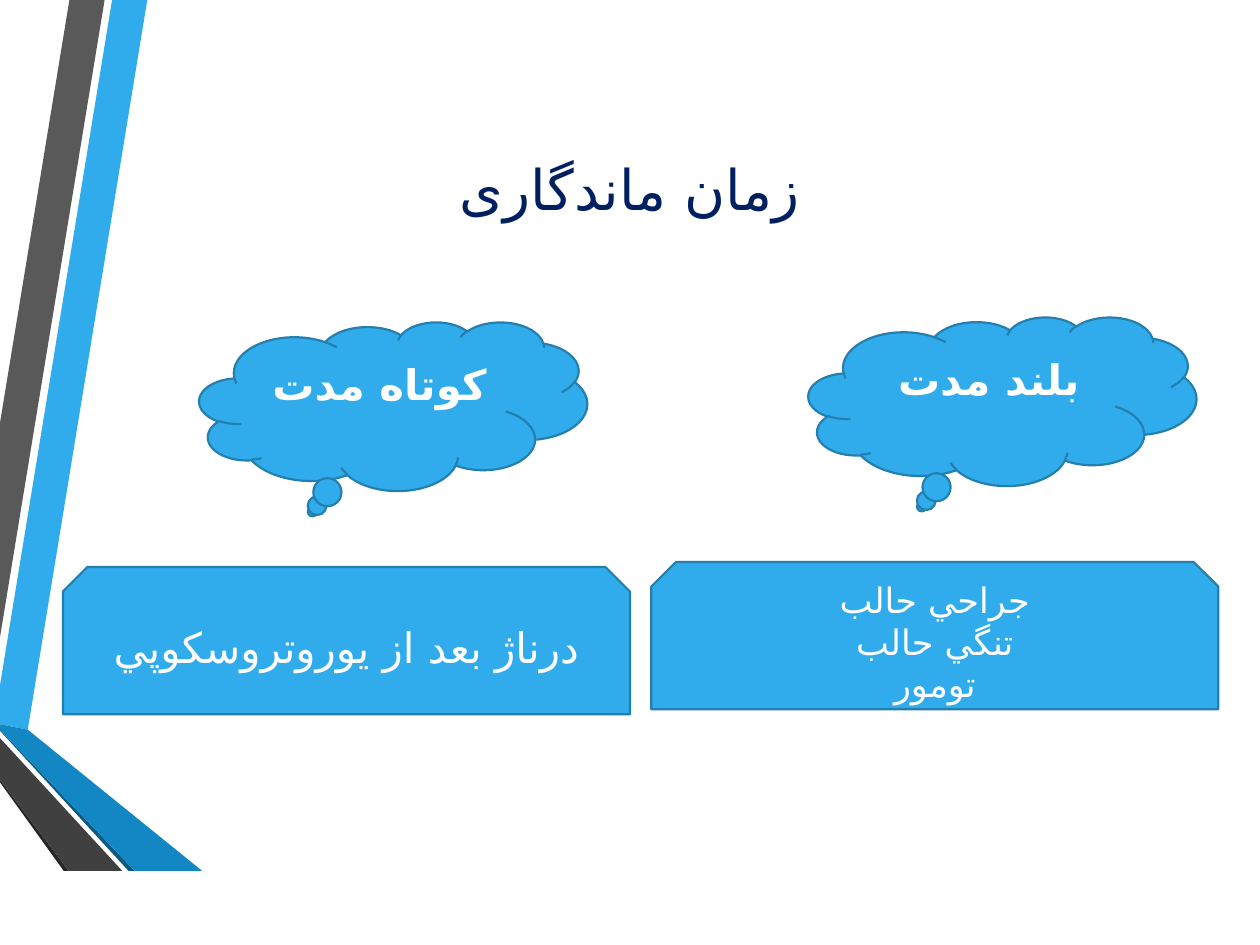
from dataclasses import dataclass

from lxml import etree
from pptx import Presentation
from pptx.dml.color import RGBColor
from pptx.enum.shapes import MSO_SHAPE
from pptx.enum.text import MSO_ANCHOR, PP_ALIGN
from pptx.oxml.ns import qn
from pptx.util import Cm, Pt

CLOUD = MSO_SHAPE.CLOUD_CALLOUT
SNIPPED = MSO_SHAPE.SNIP_2_SAME_RECTANGLE
RECTANGLE = MSO_SHAPE.RECTANGLE
CENTER = PP_ALIGN.CENTER
MIDDLE = MSO_ANCHOR.MIDDLE


@dataclass(frozen=True)
class Theme:
    font: str = "Calibri"
    persian_font: str = "DejaVu Sans"
    title: str = "002060"
    accent: str = "30ACEC"
    outline: str = "247FAF"
    white: str = "FFFFFF"
    title_size: int = 32
    body_size: int = 24
    list_size: int = 20
    line_width: float = 1.25


THEME = Theme()

# Ribbon corners in hundredths of a centimetre
RIBBONS = [
    (THEME.accent, [(0, 1382), (0, 1460), (56, 1471), (297, 0), (226, 0)]),
    ("595959", [(211, 0), (140, 0), (0, 853), (0, 1285)]),
    ("262626", [(0, 1572), (0, 1577), (236, 1905), (251, 1905)]),
    ("0C5A82", [(0, 1471), (0, 1473), (396, 1905), (414, 1905)]),
    ("1287C3", [(0, 1471), (414, 1905), (592, 1905), (56, 1471), (0, 1460)]),
    ("404040", [(0, 1572), (251, 1905), (384, 1905), (0, 1488)]),
]

# Cloud left, box left, top shift, heading, items, item size
COLUMNS = [
    (4.02, 1.27, 0, "کوتاه مدت", ["درناژ بعد از يوروتروسكوپي"], THEME.body_size),
    (16.3, 13.13, -0.1, "بلند مدت", ["جراحي حالب", "تنگي حالب", "تومور"],
     THEME.list_size),
]


def paint(sp, fill, line=None):
    sp.shadow.inherit = False
    sp.fill.solid()
    sp.fill.fore_color.rgb = RGBColor.from_string(fill)
    if line:
        sp.line.color.rgb = RGBColor.from_string(line)
        sp.line.width = Pt(THEME.line_width)
    else:
        sp.line.fill.background()


def write(tf, lines, size, color, bold=False):
    """Fill a text frame with centred right-to-left paragraphs."""
    tf.word_wrap = True
    tf.vertical_anchor = MIDDLE
    for i, line in enumerate(lines):
        p = tf.paragraphs[0] if i == 0 else tf.add_paragraph()
        p.alignment = CENTER
        p._p.get_or_add_pPr().set("rtl", "1")
        r = p.add_run()
        r.text = line
        r.font.name = THEME.font
        r.font.size = Pt(size)
        r.font.bold = bold
        r.font.color.rgb = RGBColor.from_string(color)
        rPr = r._r.get_or_add_rPr()
        rPr.set("lang", "fa-IR")
        etree.SubElement(rPr, qn("a:cs")).set("typeface", THEME.persian_font)


def add_ribbon(slide, color, points):
    builder = slide.shapes.build_freeform(*points[0], scale=Cm(0.01))
    builder.add_line_segments(points[1:], close=True)
    paint(builder.convert_to_shape(), color)


def add_block(slide, kind, left, top, width, height, fill, line):
    sp = slide.shapes.add_shape(kind, Cm(left), Cm(top), Cm(width), Cm(height))
    paint(sp, fill, line)
    return sp


def add_title(slide, text):
    title = slide.shapes.title
    title.left, title.top = Cm(1.27), Cm(2.84)
    title.width, title.height = Cm(22.86), Cm(1.9)
    write(title.text_frame, [text], THEME.title_size, THEME.title)


def add_column(slide, cloud_left, box_left, shift, heading, items, size):
    cloud = add_block(slide, CLOUD, cloud_left, 6.49 + shift, 7.82, 3.4,
                      THEME.accent, THEME.outline)
    write(cloud.text_frame, [heading], THEME.body_size, THEME.white, bold=True)
    cloud.text_frame.margin_bottom = Cm(0.87)
    box = add_block(slide, SNIPPED, box_left, 11.43 + shift, 11.43, 2.97,
                    THEME.accent, THEME.outline)
    write(box.text_frame, items, size, THEME.white)


def main():
    prs = Presentation()
    prs.slide_width, prs.slide_height = Cm(25.4), Cm(19.05)
    slide = prs.slides.add_slide(prs.slide_layouts[5])
    for color, points in RIBBONS:
        add_ribbon(slide, color, points)
    add_title(slide, "زمان ماندگاری")
    for column in COLUMNS:
        add_column(slide, *column)
    add_block(slide, RECTANGLE, 0.1, 17.58, 20.85, 1.45, THEME.white, THEME.white)
    prs.save("out.pptx")


if __name__ == "__main__":
    main()
